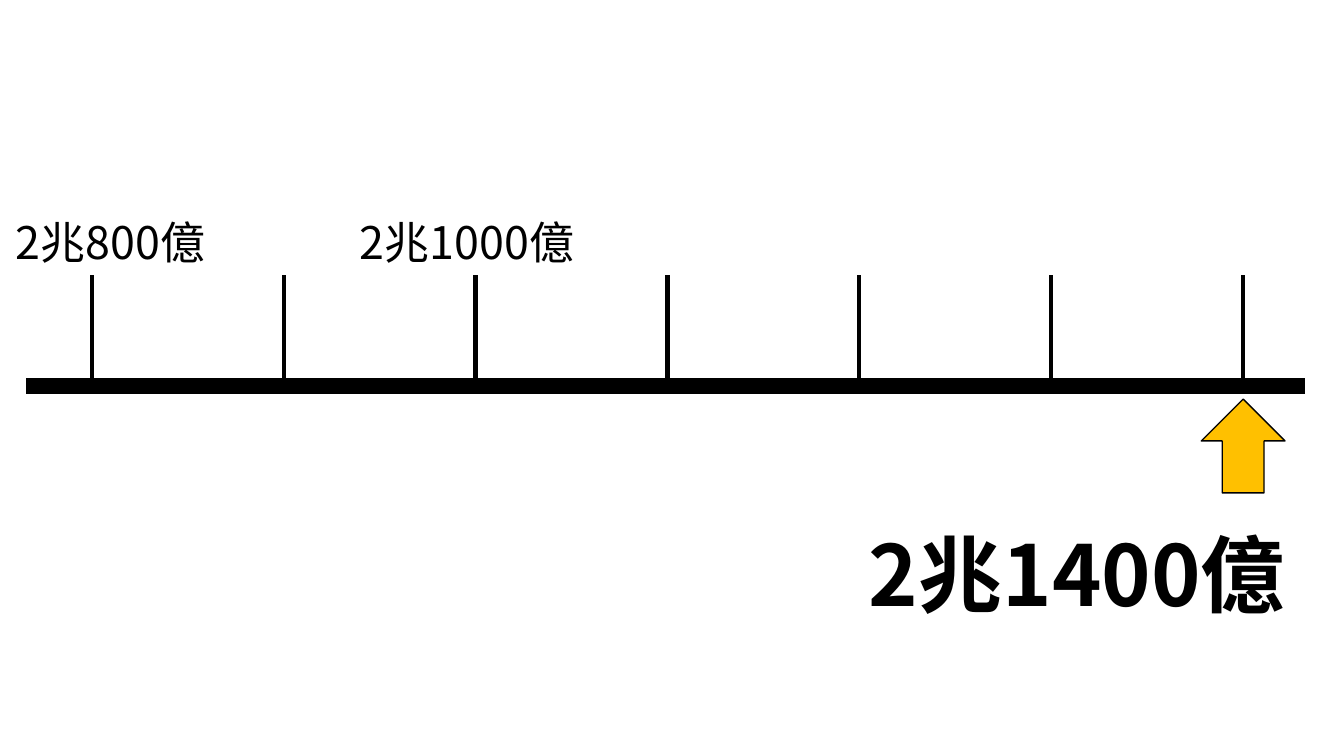
import pptx
import pptx.util
import pptx.dml.color
import pptx.enum.shapes
import pptx.enum.text
import pptx.oxml.ns
from dataclasses import dataclass
from lxml import etree

Inches = pptx.util.Inches
Pt = pptx.util.Pt


@dataclass(frozen=True)
class Theme:
    black: str = "000000"
    amber: str = "FFC000"
    font: str = "Noto Sans CJK JP"
    label_size: int = 32
    answer_size: int = 60
    axis_width: int = 12
    tick_width: int = 3
    outline_width: int = 1


THEME = Theme()

# Number line geometry in inches
AXIS_LEFT, AXIS_RIGHT, AXIS_Y = 0.26, 12.94, 3.83
TICK_TOP, TICK_COUNT = 2.73, 7
FIRST_TICK, LAST_TICK = 0.91, 12.33
TICK_GAP = (LAST_TICK - FIRST_TICK) / (TICK_COUNT - 1)


def color(value):
    return pptx.dml.color.RGBColor.from_string(value)


def apply_format(target, values):
    for name, value in values.items():
        setattr(target, name, value)


def add_line(slide, start, end, width):
    connector = slide.shapes.add_connector(
        pptx.enum.shapes.MSO_CONNECTOR.STRAIGHT,
        *(Inches(length) for length in start + end))
    connector.line.width = Pt(width)
    connector.line.color.rgb = color(THEME.black)
    properties = connector._element.spPr
    etree.SubElement(properties, pptx.oxml.ns.qn("a:effectLst"))


def add_label(slide, text, box, size, bold=False):
    shape = slide.shapes.add_textbox(*(Inches(length) for length in box))
    frame = shape.text_frame
    apply_format(frame, {
        "word_wrap": True,
        "auto_size": pptx.enum.text.MSO_AUTO_SIZE.SHAPE_TO_FIT_TEXT,
    })
    run = frame.paragraphs[0].add_run()
    run.text = text
    apply_format(run.font, {"name": THEME.font, "size": Pt(size), "bold": bold})
    run.font.color.rgb = color(THEME.black)
    # East Asian characters take their typeface from a separate element
    east_asian = etree.SubElement(run.font._element, pptx.oxml.ns.qn("a:ea"))
    east_asian.set("typeface", THEME.font)


def add_up_arrow(slide, center, top, width, height):
    shape = slide.shapes.add_shape(
        pptx.enum.shapes.MSO_SHAPE.UP_ARROW,
        Inches(center - width / 2), Inches(top), Inches(width), Inches(height))
    shape.shadow.inherit = False
    shape.fill.solid()
    shape.fill.fore_color.rgb = color(THEME.amber)
    shape.line.color.rgb = color(THEME.black)
    shape.line.width = Pt(THEME.outline_width)


def main():
    presentation = pptx.Presentation()
    apply_format(presentation, {"slide_width": Inches(13.33), "slide_height": Inches(7.5)})
    slide = presentation.slides.add_slide(presentation.slide_layouts[6])

    # Number line with evenly spaced ticks
    for index in range(TICK_COUNT):
        x = FIRST_TICK + index * TICK_GAP
        add_line(slide, (x, AXIS_Y), (x, TICK_TOP), THEME.tick_width)
    add_line(slide, (AXIS_LEFT, AXIS_Y), (AXIS_RIGHT, AXIS_Y), THEME.axis_width)

    # Known values
    add_label(slide, "2兆800億", (0.06, 2.08, 2.21, 0.64), THEME.label_size)
    add_label(slide, "2兆1000億", (3.47, 2.08, 2.49, 0.64), THEME.label_size)

    # Answer at the last tick
    add_up_arrow(slide, LAST_TICK, 3.96, 0.83, 0.93)
    add_label(slide, "2兆1400億", (8.52, 5.13, 4.73, 1.11), THEME.answer_size, bold=True)

    presentation.save("out.pptx")


if __name__ == "__main__":
    main()
